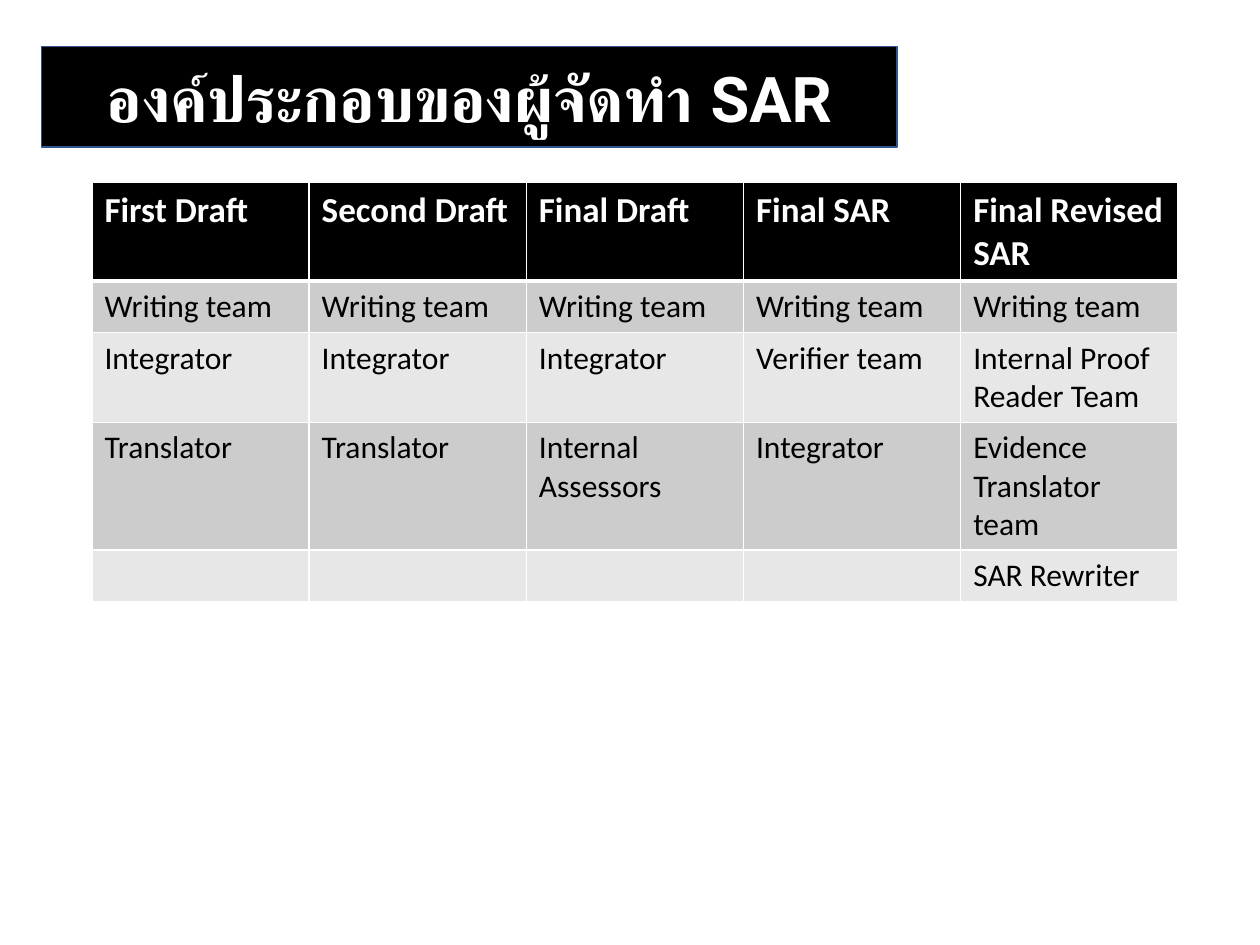
from dataclasses import dataclass

from lxml import etree
from pptx import Presentation
from pptx.dml.color import RGBColor
from pptx.enum.shapes import MSO_SHAPE
from pptx.enum.text import MSO_ANCHOR, PP_ALIGN
from pptx.oxml.ns import qn
from pptx.util import Inches, Pt

RECT = MSO_SHAPE.RECTANGLE
MIDDLE = MSO_ANCHOR.MIDDLE
CENTER = PP_ALIGN.CENTER

COLORS = {
    "black": "000000",
    "white": "FFFFFF",
    "dark": "CCCCCC",
    "light": "E7E7E7",
    "edge": "325491",
}


@dataclass(frozen=True)
class Style:
    font: str
    size: int
    color: str
    bold: bool = False


TITLE = Style("Roboto", 36, "white", True)
HEAD = Style("Calibri", 20, "white", True)
BODY = Style("Calibri", 18, "black")

DRAFTS = {
    "First Draft": ["Writing team", "Integrator", "Translator"],
    "Second Draft": ["Writing team", "Integrator", "Translator"],
    "Final Draft": ["Writing team", "Integrator", "Internal Assessors"],
    "Final SAR": ["Writing team", "Verifier team", "Integrator"],
    "Final Revised SAR": [
        "Writing team",
        "Internal Proof Reader Team",
        "Evidence Translator team",
        "SAR Rewriter",
    ],
}


def paint(name: str) -> RGBColor:
    return RGBColor.from_string(COLORS[name])


def write(para, text: str, style: Style) -> None:
    run = para.add_run()
    run.text = text
    font = run.font
    font.name = style.font
    font.size = Pt(style.size)
    font.bold = style.bold
    font.color.rgb = paint(style.color)


def border(cell, base: int) -> None:
    """Draw white cell edges, with the bottom one base points wide."""
    props = cell._tc.get_or_add_tcPr()
    for side, width in (("L", 1), ("R", 1), ("T", 1), ("B", base)):
        line = etree.SubElement(props, qn(f"a:ln{side}"), w=str(Pt(width)))
        fill = etree.SubElement(line, qn("a:solidFill"))
        etree.SubElement(fill, qn("a:srgbClr"), val=COLORS["white"])


def add_title(slide, text: str) -> None:
    box = slide.shapes.add_shape(
        RECT, Inches(0.33), Inches(0.37), Inches(6.79), Inches(0.8)
    )
    box.shadow.inherit = False
    box.fill.solid()
    box.fill.fore_color.rgb = paint("black")
    box.line.color.rgb = paint("edge")
    box.line.width = Pt(1)
    frame = box.text_frame
    frame.vertical_anchor = MIDDLE
    para = frame.paragraphs[0]
    para.alignment = CENTER
    write(para, text, TITLE)


def add_grid(slide, drafts: dict[str, list[str]]) -> None:
    count = 1 + max(len(teams) for teams in drafts.values())
    frame = slide.shapes.add_table(
        count, len(drafts), Inches(0.73), Inches(1.45), Inches(8.62), Inches(5.02)
    )
    table = frame.table
    for row in table.rows:
        row.height = Inches(0.41)
    frame.height = Inches(5.02)

    for col, (name, teams) in enumerate(drafts.items()):
        texts = [name, *teams]
        for row in range(count):
            cell = table.cell(row, col)
            head = row == 0
            border(cell, 3 if head else 1)
            band = "black" if head else "dark" if row % 2 else "light"
            cell.fill.solid()
            cell.fill.fore_color.rgb = paint(band)
            if row < len(texts):
                para = cell.text_frame.paragraphs[0]
                write(para, texts[row], HEAD if head else BODY)


def main() -> None:
    deck = Presentation()
    deck.slide_width = Inches(10)
    deck.slide_height = Inches(7.5)
    slide = deck.slides.add_slide(deck.slide_layouts[6])
    add_grid(slide, DRAFTS)
    add_title(slide, "องค์ประกอบของผู้จัดทำ SAR")
    deck.save("out.pptx")


if __name__ == "__main__":
    main()
